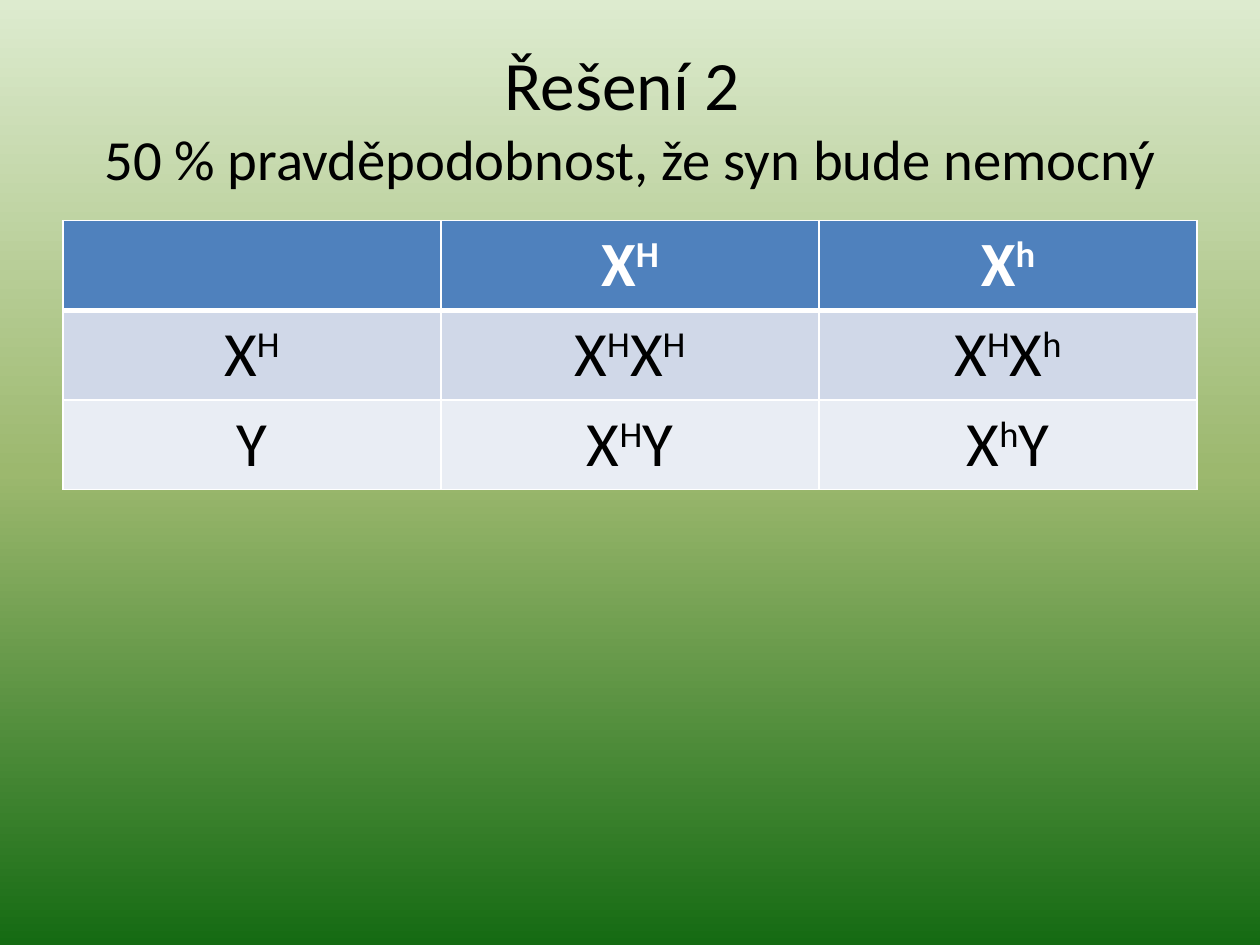
from copy import deepcopy
from dataclasses import dataclass

from lxml import etree
from pptx import Presentation
from pptx.dml.color import RGBColor
from pptx.enum import text as t
from pptx.oxml.ns import qn
from pptx.util import Pt

BLACK = RGBColor(0x00, 0x00, 0x00)
WHITE = RGBColor(0xFF, 0xFF, 0xFF)
BLUE = RGBColor(0x4F, 0x81, 0xBD)
PALE = RGBColor(0xD0, 0xD8, 0xE8)
LIGHT = RGBColor(0xE9, 0xED, 0xF4)
SKY = [(0, RGBColor(0xDD, 0xEB, 0xCF)),
       (0.5, RGBColor(0x9C, 0xB8, 0x6E)),
       (1, RGBColor(0x15, 0x6B, 0x13))]


@dataclass
class Row:
    cells: tuple  # a letter after ^ is raised
    fill: RGBColor
    ink: RGBColor = BLACK
    bold: bool = False
    top: float = 1
    base: float = 1


ROWS = [
    Row(("", "X^H", "X^h"), BLUE, WHITE, bold=True, base=3),
    Row(("X^H", "X^HX^H", "X^HX^h"), PALE, top=3),
    Row(("Y", "X^HY", "X^hY"), LIGHT),
]


def write(par, text: str, size: float, color=BLACK, bold=False, up=False):
    """Add one formatted run to a centred paragraph."""
    par.alignment = t.PP_ALIGN.CENTER
    run = par.add_run()
    run.text = text
    font = run.font
    font.name, font.size, font.bold = "Calibri", Pt(size), bold
    font.color.rgb = color
    if up:
        font._element.set("baseline", "30000")
    return run


def edge(cell, row: Row) -> None:
    """Put white borders ahead of the cell's fill."""
    props = cell._tc.get_or_add_tcPr()
    sides = {"L": 1, "R": 1, "T": row.top, "B": row.base}
    for spot, (side, width) in enumerate(sides.items()):
        line = etree.Element(qn(f"a:ln{side}"), w=str(Pt(width)))
        fill = etree.SubElement(line, qn("a:solidFill"))
        etree.SubElement(fill, qn("a:srgbClr"), val=str(WHITE))
        props.insert(spot, line)


def paint(slide) -> None:
    """Fill the background from top to bottom."""
    fill = slide.background.fill
    fill.gradient()
    fill.gradient_angle = 270
    stops = slide._element.find(".//" + qn("a:gsLst"))
    stops.append(deepcopy(stops[0]))
    for stop, (place, color) in zip(fill.gradient_stops, SKY):
        stop.position = place
        stop.color.rgb = color


def head(slide) -> None:
    """Fill the two-line title."""
    title = slide.shapes.title
    title.left, title.top, title.width, title.height = map(
        Pt, (36, 21.6, 648, 90))
    frame = title.text_frame
    frame.word_wrap = True
    frame.auto_size = t.MSO_AUTO_SIZE.NONE
    frame.vertical_anchor = t.MSO_ANCHOR.MIDDLE
    par = frame.paragraphs[0]
    first = write(par, "Řešení 2 ", 39.6)
    par.add_line_break()
    # The break keeps the first line's size
    par._p.find(qn("a:br")).append(deepcopy(first.font._element))
    write(par, "50 % pravděpodobnost, že syn bude nemocný", 32.4)


def cross(slide) -> None:
    """Draw the table of gene crosses."""
    high = 51.2
    grid = slide.shapes.add_table(len(ROWS), 3, Pt(36), Pt(126), Pt(648),
                                  Pt(high * len(ROWS))).table
    for line, row in zip(grid.rows, ROWS):
        line.height = Pt(high)
        for cell, code in zip(line.cells, row.cells):
            cell.fill.solid()
            cell.fill.fore_color.rgb = row.fill
            edge(cell, row)
            par = cell.text_frame.paragraphs[0]
            for spot, sign in enumerate(code):
                if sign != "^":
                    write(par, sign, 36, row.ink, row.bold,
                          up=code[:spot].endswith("^"))


def main() -> None:
    deck = Presentation()
    deck.slide_width, deck.slide_height = Pt(720), Pt(540)
    slide = deck.slides.add_slide(deck.slide_layouts[5])
    paint(slide)
    head(slide)
    cross(slide)
    deck.save("out.pptx")


if __name__ == "__main__":
    main()
